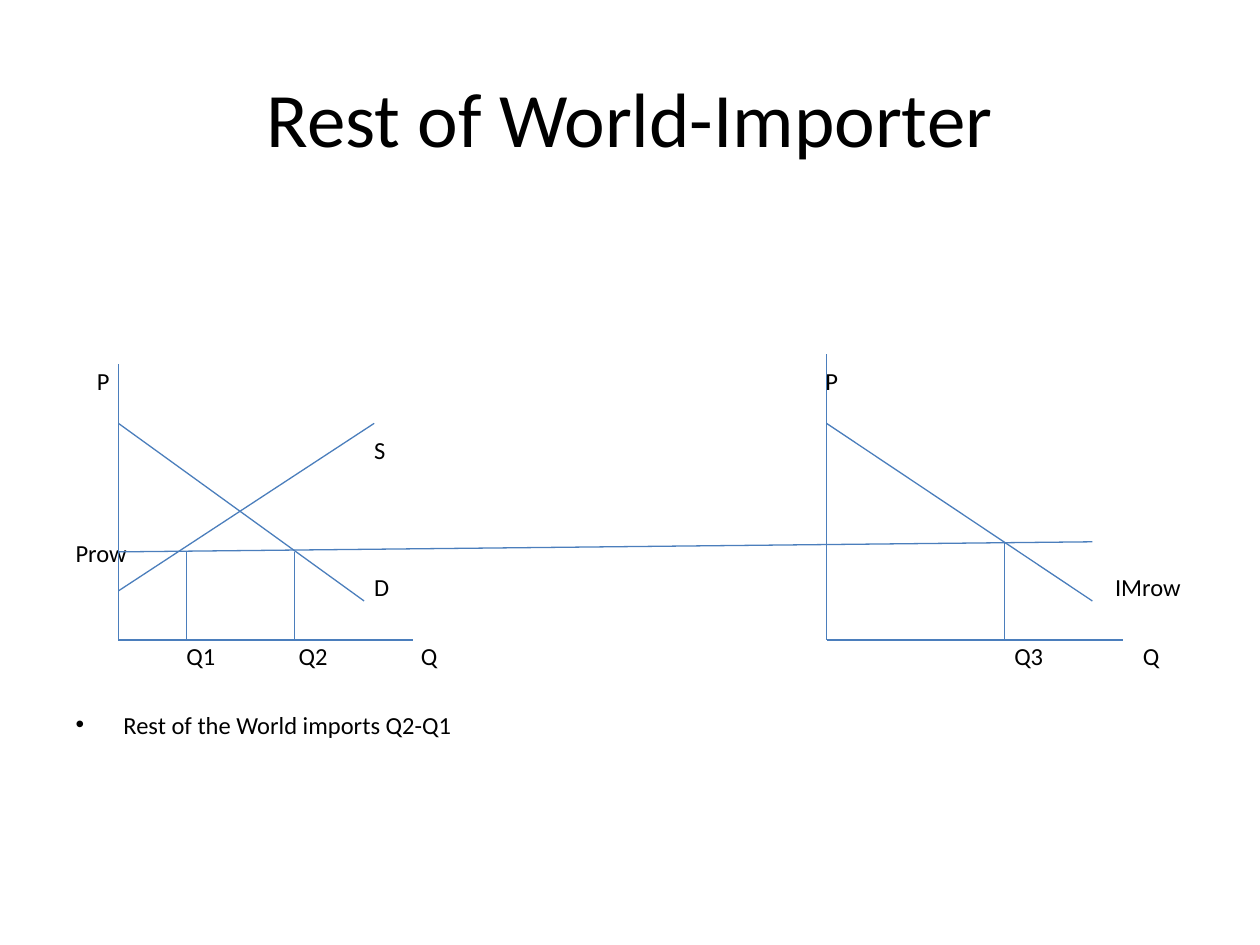
from dataclasses import dataclass

from lxml import etree
from pptx import Presentation
from pptx.dml.color import RGBColor
from pptx.enum.shapes import MSO_CONNECTOR
from pptx.enum.text import MSO_ANCHOR, PP_ALIGN
from pptx.oxml.ns import qn
from pptx.shapes.autoshape import Shape
from pptx.slide import Slide
from pptx.util import Inches, Pt

BLACK = RGBColor(0x00, 0x00, 0x00)
BLUE = RGBColor(0x4B, 0x7E, 0xBC)
STRAIGHT = MSO_CONNECTOR.STRAIGHT
MIDDLE = MSO_ANCHOR.MIDDLE
LEFT, CENTER = PP_ALIGN.LEFT, PP_ALIGN.CENTER
FONT = "Calibri"

HOME, WORLD = 0.94, 6.56
BASE, TOP = 5.08, 3.36
PRICE, RISE = 4.38, 4.3
LOW, RIGHT = 4.77, 8.67
FIRST, PITCH = 2.9, 0.273


@dataclass
class Line:
    x1: float
    y1: float
    x2: float
    y2: float


@dataclass
class Label:
    text: str
    x: float
    row: int
    width: float = 0.8


LINES = [
    Line(HOME, 2.89, HOME, BASE),
    Line(HOME, BASE, 3.28, BASE),
    Line(WORLD, 2.81, WORLD, BASE),
    Line(WORLD, BASE, 8.91, BASE),
    Line(HOME, TOP, 2.89, LOW),
    Line(HOME, 4.69, 2.97, TOP),
    Line(WORLD, TOP, RIGHT, LOW),
    Line(HOME, PRICE, RIGHT, RISE),
    Line(1.48, PRICE, 1.48, BASE),
    Line(2.34, PRICE, 2.34, BASE),
    Line(7.97, RISE, 7.97, BASE),
]

LABELS = [
    Label("P", 0.77, 0),
    Label("P", 6.55, 0),
    Label("S", 2.97, 2),
    Label("Prow", 0.6, 5),
    Label("D", 2.97, 6),
    Label("IMrow", 8.85, 6),
    Label("Q1", 1.48, 8),
    Label("Q2", 2.37, 8),
    Label("Q", 3.34, 8),
    Label("Q3", 8.05, 8),
    Label("Q", 9.07, 8),
]
NOTE = Label("Rest of the World imports Q2-Q1", 0.6, 10, 8.8)


def add_text(slide: Slide, text: str, x: float, y: float, width: float,
             height: float, size: int, align: PP_ALIGN = LEFT) -> Shape:
    box = slide.shapes.add_textbox(Inches(x), Inches(y), Inches(width), Inches(height))
    frame = box.text_frame
    frame.margin_left = frame.margin_right = frame.margin_top = frame.margin_bottom = 0
    frame.word_wrap = True
    frame.vertical_anchor = MIDDLE
    frame.text = text
    para = frame.paragraphs[0]
    para.alignment = align
    font = para.runs[0].font
    font.name, font.size = FONT, Pt(size)
    font.color.rgb = BLACK
    return box


def add_label(slide: Slide, label: Label) -> Shape:
    top = FIRST + label.row * PITCH
    return add_text(slide, label.text, label.x, top, label.width, 0.24, 14)


def add_bullet(box: Shape) -> None:
    props = box.text_frame.paragraphs[0]._p.get_or_add_pPr()
    props.set("marL", str(Inches(0.38)))
    props.set("indent", str(Inches(-0.38)))
    etree.SubElement(props, qn("a:buFont")).set("typeface", "Arial")
    etree.SubElement(props, qn("a:buChar")).set("char", "•")


def add_line(slide: Slide, line: Line) -> None:
    link = slide.shapes.add_connector(
        STRAIGHT, Inches(line.x1), Inches(line.y1), Inches(line.x2), Inches(line.y2))
    link.line.color.rgb = BLUE
    link.line.width = Pt(0.75)
    etree.SubElement(link._element.spPr, qn("a:effectLst"))


def main() -> None:
    deck = Presentation()
    deck.slide_width, deck.slide_height = Inches(10), Inches(7.5)
    slide = deck.slides.add_slide(deck.slide_layouts[6])
    add_text(slide, "Rest of World-Importer", 0.5, 0.3, 9, 1.25, 44, CENTER)
    for label in LABELS:
        add_label(slide, label)
    add_bullet(add_label(slide, NOTE))
    for line in LINES:
        add_line(slide, line)
    deck.save("out.pptx")


if __name__ == "__main__":
    main()
